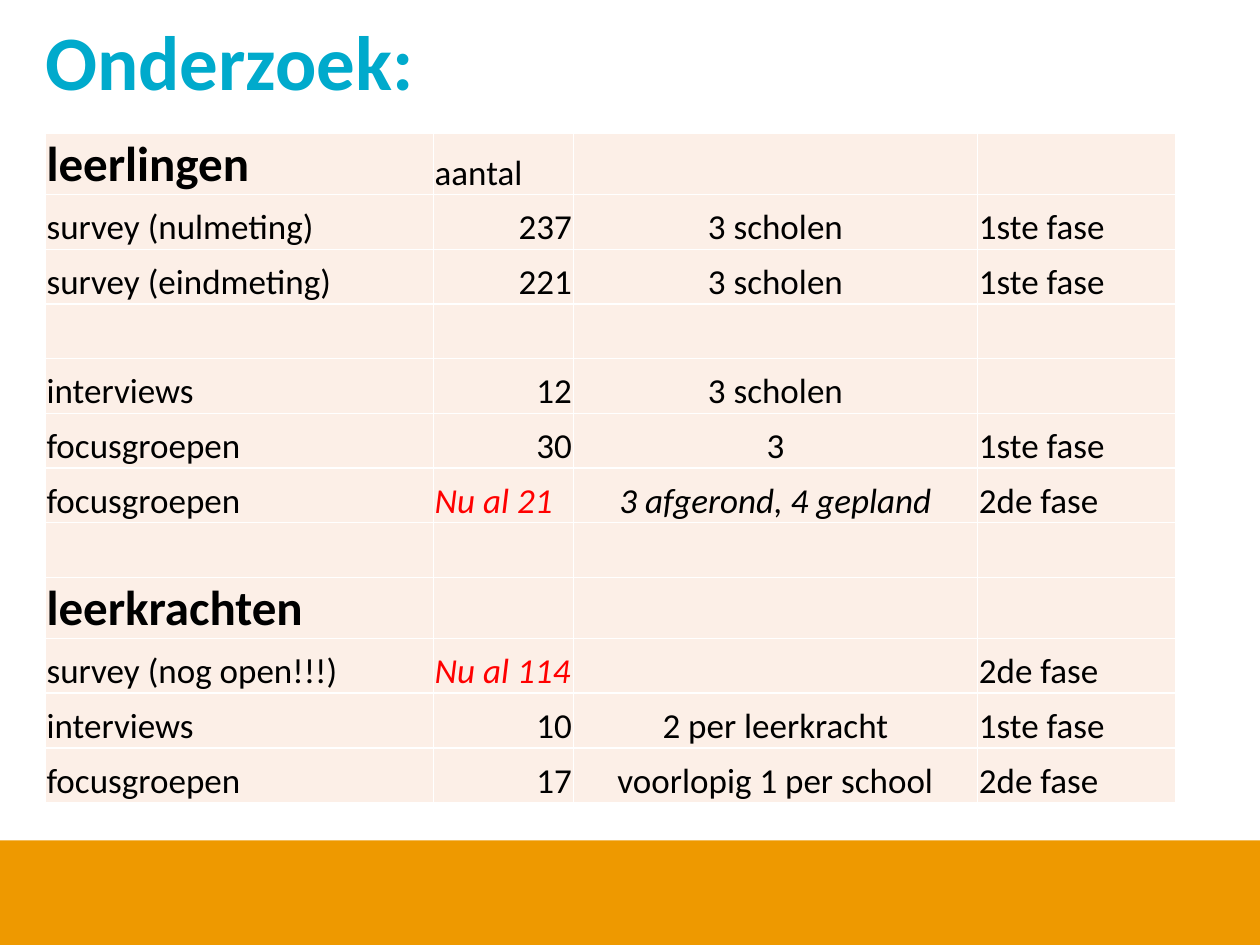
from pptx import Presentation
from pptx import util as u
from pptx.dml.color import RGBColor
from pptx.enum import shapes, text
from pptx.oxml import parse_xml
from pptx.oxml.ns import nsdecls

ORANGE = RGBColor(0xEE, 0x99, 0x00)
CYAN = RGBColor(0x00, 0xAA, 0xCC)
PEACH = RGBColor(0xFC, 0xEF, 0xE7)
WHITE = RGBColor(0xFF, 0xFF, 0xFF)
BLACK = RGBColor(0x00, 0x00, 0x00)
RED = RGBColor(0xFF, 0x00, 0x00)

LEFT, CENTER, RIGHT = text.PP_ALIGN.LEFT, text.PP_ALIGN.CENTER, text.PP_ALIGN.RIGHT
COLUMN_WIDTHS = [3.08, 1.11, 3.21, 1.57]
TABLE_HEIGHT = 5.3
HEADING_HEIGHT = 0.48
HEADINGS = {"leerlingen", "leerkrachten"}
PROVISIONAL = {"Nu al 21": RED, "Nu al 114": RED, "3 afgerond, 4 gepland": BLACK}

ROWS = [
    ["leerlingen", "aantal", "", ""],
    ["survey (nulmeting)", "237", "3 scholen", "1ste fase"],
    ["survey (eindmeting)", "221", "3 scholen", "1ste fase"],
    ["", "", "", ""],
    ["interviews", "12", "3 scholen", ""],
    ["focusgroepen", "30", "3", "1ste fase"],
    ["focusgroepen", "Nu al 21", "3 afgerond, 4 gepland", "2de fase"],
    ["", "", "", ""],
    ["leerkrachten", "", "", ""],
    ["survey (nog open!!!)", "Nu al 114", "", "2de fase"],
    ["interviews", "10", "2 per leerkracht", "1ste fase"],
    ["focusgroepen", "17", "voorlopig 1 per school", "2de fase"],
]


class SlideBuilder:
    font_name = "Calibri"

    def __init__(self, slide):
        self.slide = slide

    def add_run(self, paragraph, words, size, color, bold=False, italic=False):
        run = paragraph.add_run()
        run.text = words
        font = run.font
        font.name = self.font_name
        font.size = u.Pt(size)
        font.bold = bold
        font.italic = italic
        font.color.rgb = color

    def background(self, color):
        fill = self.slide.background.fill
        fill.solid()
        fill.fore_color.rgb = color

    def band(self, left, top, width, height, color):
        shape = self.slide.shapes.add_shape(
            shapes.MSO_SHAPE.RECTANGLE,
            u.Inches(left), u.Inches(top), u.Inches(width), u.Inches(height))
        shape.shadow.inherit = False
        shape.fill.solid()
        shape.fill.fore_color.rgb = color
        shape.line.fill.background()

    def title(self, words, left, top, width, height):
        title = self.slide.shapes.title
        title.left, title.top = u.Inches(left), u.Inches(top)
        title.width, title.height = u.Inches(width), u.Inches(height)
        frame = title.text_frame
        frame.word_wrap = True
        frame.auto_size = text.MSO_AUTO_SIZE.NONE
        frame.vertical_anchor = text.MSO_ANCHOR.BOTTOM
        frame.margin_left = frame.margin_right = 0
        frame.margin_top = frame.margin_bottom = 0
        paragraph = frame.paragraphs[0]
        paragraph.alignment = LEFT
        paragraph.line_spacing = 0.9
        self.add_run(paragraph, words, 44, CYAN, bold=True)

    def borders(self, cell, color, width):
        properties = cell._tc.get_or_add_tcPr()
        for side in ("lnL", "lnR", "lnT", "lnB"):
            properties.append(parse_xml(
                f'<a:{side} {nsdecls("a")} w="{u.Pt(width)}"><a:solidFill>'
                f'<a:srgbClr val="{color}"/></a:solidFill></a:{side}>'))

    def cell(self, cell, words, column):
        cell.margin_left = cell.margin_right = cell.margin_top = u.Inches(0.01)
        cell.margin_bottom = 0
        cell.vertical_anchor = text.MSO_ANCHOR.BOTTOM
        self.borders(cell, WHITE, 1)
        cell.fill.solid()
        cell.fill.fore_color.rgb = PEACH
        if not words:
            return
        paragraph = cell.text_frame.paragraphs[0]
        if column == 1:
            paragraph.alignment = RIGHT if words.isdigit() else LEFT
        else:
            paragraph.alignment = CENTER if column == 2 else LEFT
        heading = words in HEADINGS
        self.add_run(paragraph, words, 28 if heading else 20,
                     PROVISIONAL.get(words, BLACK),
                     bold=heading, italic=words in PROVISIONAL)

    def table(self, rows, left, top):
        table = self.slide.shapes.add_table(
            len(rows), len(COLUMN_WIDTHS), u.Inches(left), u.Inches(top),
            u.Inches(sum(COLUMN_WIDTHS)), u.Inches(TABLE_HEIGHT)).table
        table.first_row = table.horz_banding = False
        for column, width in zip(table.columns, COLUMN_WIDTHS):
            column.width = u.Inches(width)
        row_height = ((TABLE_HEIGHT - len(HEADINGS) * HEADING_HEIGHT)
                      / (len(rows) - len(HEADINGS)))
        for row, values in zip(table.rows, rows):
            row.height = u.Inches(HEADING_HEIGHT if values[0] in HEADINGS else row_height)
            for column, words in enumerate(values):
                self.cell(row.cells[column], words, column)


def main():
    presentation = Presentation()
    presentation.slide_width = u.Inches(10)
    presentation.slide_height = u.Inches(7.5)
    builder = SlideBuilder(presentation.slides.add_slide(presentation.slide_layouts[5]))
    builder.background(WHITE)
    builder.band(0, 6.67, 10, 0.83, ORANGE)
    builder.title("Onderzoek:", 0.36, -0.4, 8.98, 1.25)
    builder.table(ROWS, 0.36, 1.06)
    presentation.save("out.pptx")


if __name__ == "__main__":
    main()
